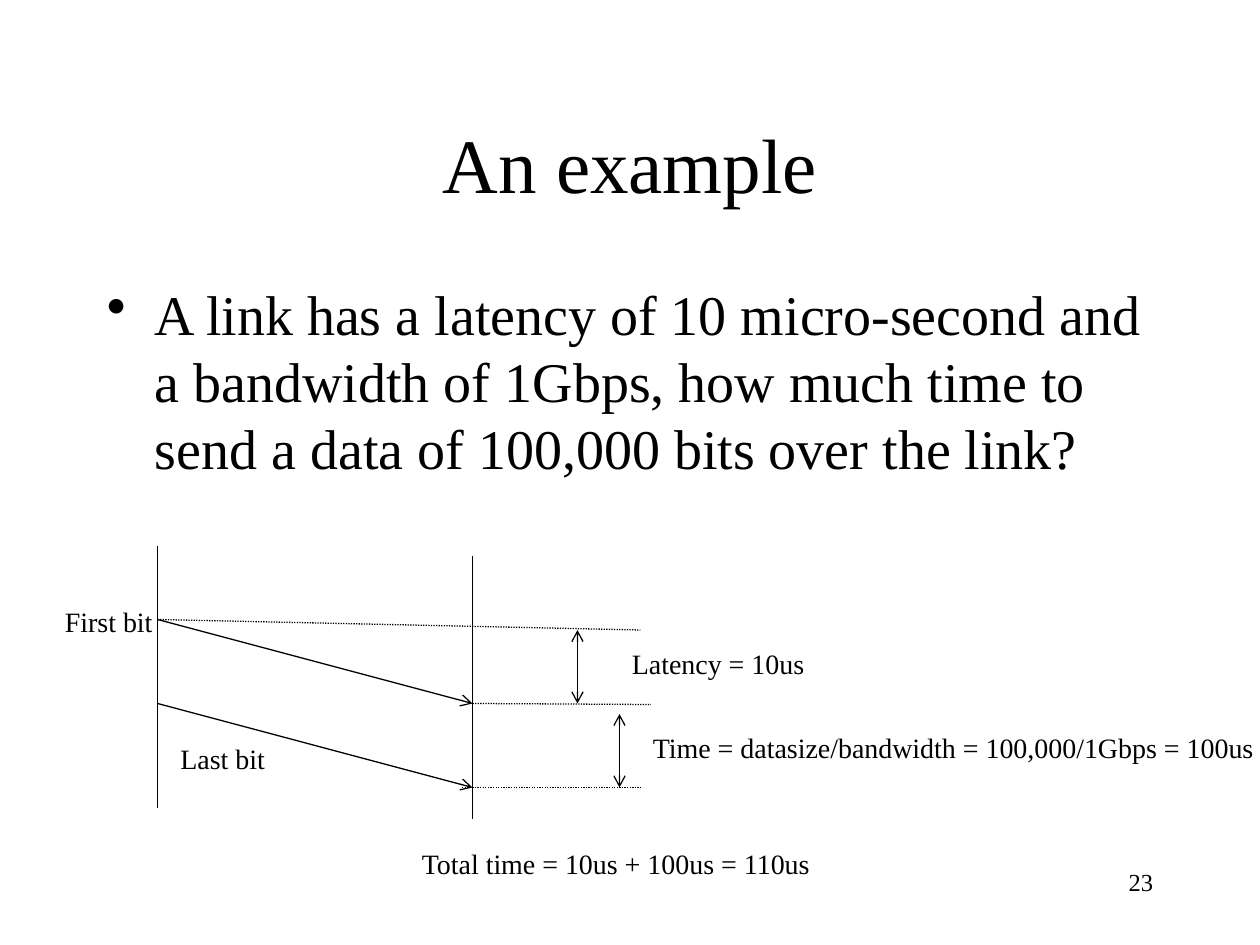
from dataclasses import dataclass

from lxml import etree
from pptx import Presentation
from pptx import util as u
from pptx.dml.color import RGBColor
from pptx.enum import dml, shapes, text
from pptx.oxml import ns


@dataclass(frozen=True)
class Theme:
    font: str = "Times New Roman"
    ink: RGBColor = RGBColor(0, 0, 0)
    paper: RGBColor = RGBColor(255, 255, 255)
    title: int = 44
    body: int = 32
    label: int = 16
    number: int = 14
    rule: float = 0.75


THEME = Theme()
COLUMNS, ROWS = 120, 90  # square grid cells of 1/12 inch


def write(paragraph, words, size, align=text.PP_ALIGN.LEFT, bullet=None, indent=0.38):
    """Fill a paragraph with formatted words, optionally bulleted."""
    paragraph.text = words
    paragraph.alignment = align
    if bullet:
        props = paragraph._p.get_or_add_pPr()
        props.set("marL", str(u.Inches(indent)))
        props.set("indent", str(-u.Inches(indent)))
        etree.SubElement(props, ns.qn("a:buChar"), char=bullet)
    font = paragraph.runs[0].font
    font.name, font.size = THEME.font, u.Pt(size)
    font.color.rgb = THEME.ink


class Sheet:
    """The current slide, its grid and its style."""

    def __init__(self, deck):
        self.slide = deck.slides.add_slide(deck.slide_layouts[6])
        self.cell_w = deck.slide_width / COLUMNS
        self.cell_h = deck.slide_height / ROWS
        fill = self.slide.background.fill
        fill.solid()
        fill.fore_color.rgb = THEME.paper

    def spot(self, column, row):
        return round(column * self.cell_w), round(row * self.cell_h)

    def block(self, words, column, row, columns, rows, size,
              anchor=text.MSO_ANCHOR.TOP, wrap=True, **style):
        box = self.slide.shapes.add_textbox(
            *self.spot(column, row), *self.spot(columns, rows))
        frame = box.text_frame
        frame.word_wrap = wrap
        frame.vertical_anchor = anchor
        if not wrap:
            frame.auto_size = text.MSO_AUTO_SIZE.SHAPE_TO_FIT_TEXT
        write(frame.paragraphs[0], words, size, **style)

    def label(self, words, column, row, columns):
        self.block(words, column, row, columns, 4.44, THEME.label, wrap=False)

    def line(self, start, end, dotted=False, heads=()):
        rule = self.slide.shapes.add_connector(
            shapes.MSO_CONNECTOR.STRAIGHT, *self.spot(*start), *self.spot(*end))
        rule.line.color.rgb = THEME.ink
        rule.line.width = u.Pt(THEME.rule)
        if dotted:
            rule.line.dash_style = dml.MSO_LINE.ROUND_DOT
        for head in heads:
            etree.SubElement(rule.line._ln, ns.qn(f"a:{head}"), type="arrow")
        etree.SubElement(rule._element.spPr, ns.qn("a:effectLst"))

    def arrow(self, start, end):
        self.line(start, end, heads=("tailEnd",))

    def span(self, column, top, bottom):
        self.line((column, top), (column, bottom), heads=("headEnd", "tailEnd"))


def main():
    deck = Presentation()
    deck.slide_width, deck.slide_height = u.Inches(10), u.Inches(7.5)
    sheet = Sheet(deck)

    # Title, question and slide number
    sheet.block("An example", 9, 8, 102, 15, THEME.title,
                anchor=text.MSO_ANCHOR.MIDDLE, align=text.PP_ALIGN.CENTER)
    sheet.block("A link has a latency of 10 micro-second and a bandwidth of 1Gbps, "
                "how much time to send a data of 100,000 bits over the link?",
                9, 26, 102, 20, THEME.body, bullet="•")
    sheet.block("23", 86, 82, 25, 6, THEME.number, align=text.PP_ALIGN.RIGHT)

    # Time axes of sender and receiver
    sender, receiver, axis_length = 15, 45, 25
    for axis, top in ((sender, 52), (receiver, 53)):
        sheet.line((axis, top), (axis, top + axis_length))

    # First and last bit crossing the link
    first_sent, flight = 59, 8
    first_arrived = last_sent = first_sent + flight
    last_arrived = last_sent + flight
    for sent in (first_sent, last_sent):
        sheet.arrow((sender, sent), (receiver, sent + flight))

    # Dotted guides
    sheet.line((sender, first_sent), (61, first_sent + 1), dotted=True)
    sheet.line((receiver, first_arrived), (62, first_arrived + 0.1), dotted=True)
    sheet.line((receiver - 1, last_arrived), (61, last_arrived), dotted=True)

    # Measured intervals
    sheet.span(55, first_sent + 1, first_arrived)
    sheet.span(59, first_arrived + 1, last_arrived)

    # Labels
    for words, column, row, columns in (
        ("Latency = 10us", 59, 61, 19.1),
        ("Time = datasize/bandwidth = 100,000/1Gbps = 100us", 61, 69, 60.5),
        ("First bit", 5, 57, 10.9),
        ("Last bit", 16, 70, 10.6),
        ("Total time = 10us + 100us = 110us", 39, 80, 39.8),
    ):
        sheet.label(words, column, row, columns)

    deck.save("out.pptx")


if __name__ == "__main__":
    main()
